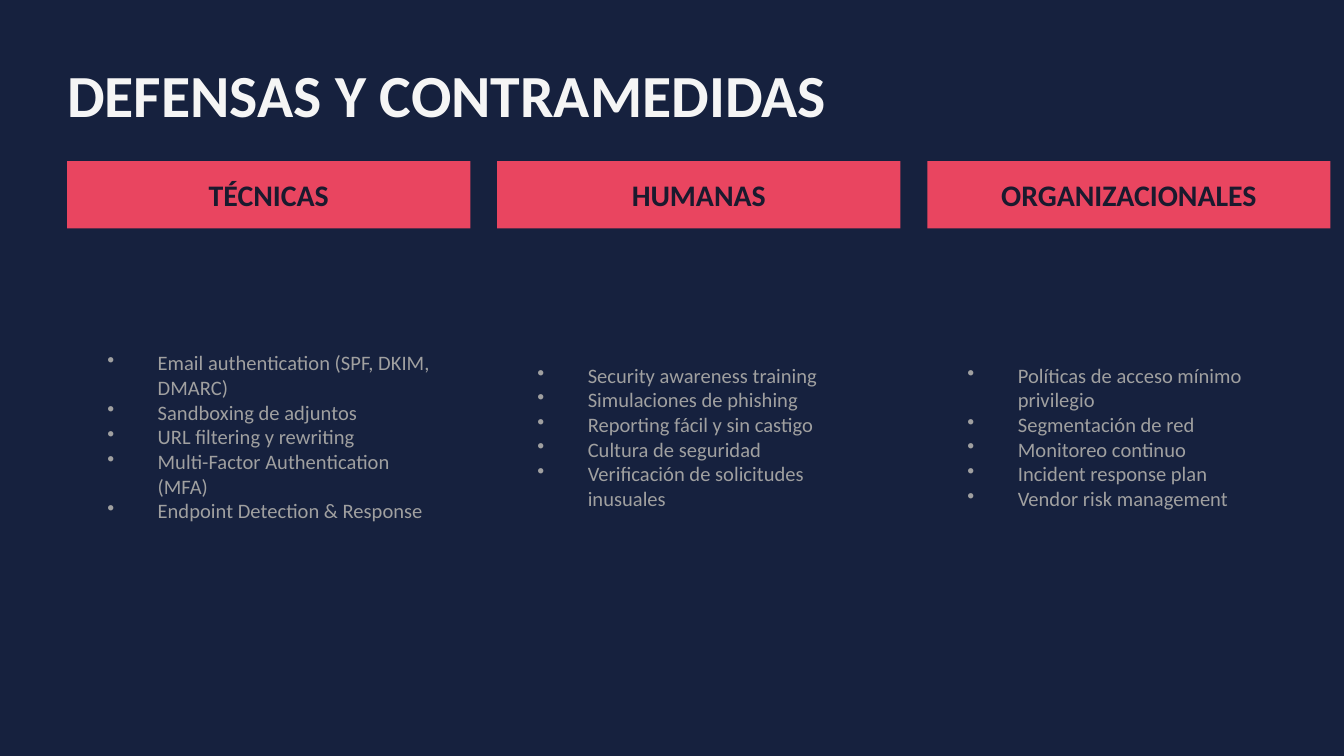
from dataclasses import dataclass

from lxml import etree
from pptx import Presentation
from pptx.dml.color import RGBColor
from pptx.enum import shapes, text
from pptx.oxml import ns
from pptx.util import Pt


@dataclass(frozen=True)
class Theme:
    font: str = "Calibri"
    background: str = "16213E"
    title: str = "F5F5F5"
    banner: str = "E94560"
    heading: str = "1A1A2E"
    body: str = "A0A0A0"
    title_size: int = 32
    heading_size: int = 16
    body_size: int = 11


THEME = Theme()
INDENT = 27

DEFENSES = {
    "TÉCNICAS": [
        "Email authentication (SPF, DKIM, DMARC)",
        "Sandboxing de adjuntos",
        "URL filtering y rewriting",
        "Multi-Factor Authentication (MFA)",
        "Endpoint Detection & Response",
    ],
    "HUMANAS": [
        "Security awareness training",
        "Simulaciones de phishing",
        "Reporting fácil y sin castigo",
        "Cultura de seguridad",
        "Verificación de solicitudes inusuales",
    ],
    "ORGANIZACIONALES": [
        "Políticas de acceso mínimo privilegio",
        "Segmentación de red",
        "Monitoreo continuo",
        "Incident response plan",
        "Vendor risk management",
    ],
}


def add_bullet(paragraph):
    properties = paragraph._p.get_or_add_pPr()
    properties.set("marL", str(Pt(INDENT)))
    properties.set("indent", str(-Pt(INDENT)))
    etree.SubElement(properties, ns.qn("a:buChar")).set("char", "•")


def add_text(slide, box, lines, *, size, color, bold=False,
             align=text.PP_ALIGN.LEFT, bulleted=False, inset=None):
    frame = slide.shapes.add_textbox(*map(Pt, box)).text_frame
    frame.word_wrap = True
    frame.vertical_anchor = text.MSO_ANCHOR.MIDDLE
    if inset is not None:
        frame.margin_left = frame.margin_right = Pt(inset)
        frame.margin_top = frame.margin_bottom = Pt(inset)
    frame.text = "\n".join(lines)
    for paragraph in frame.paragraphs:
        if bulleted:
            add_bullet(paragraph)
        paragraph.alignment = align
        font = paragraph.runs[0].font
        font.name = THEME.font
        font.size = Pt(size)
        font.bold = bold
        font.color.rgb = RGBColor.from_string(color)


def add_title(slide, box, title):
    add_text(slide, box, [title], size=THEME.title_size, color=THEME.title,
             bold=True, inset=0)


def add_defense_column(slide, box, heading, measures):
    left, top, width, height = box
    banner_height, side, list_top = 36, 14.4, 46.8
    inner_left, inner_width = left + side, width - 2 * side

    banner = slide.shapes.add_shape(
        shapes.MSO_SHAPE.RECTANGLE, *map(Pt, (left, top, width, banner_height)))
    banner.shadow.inherit = False
    banner.fill.solid()
    banner.fill.fore_color.rgb = RGBColor.from_string(THEME.banner)
    banner.line.fill.background()

    add_text(slide, (inner_left, top + 7.2, inner_width, banner_height - 14.4),
             [heading], size=THEME.heading_size, color=THEME.heading,
             bold=True, align=text.PP_ALIGN.CENTER)
    add_text(slide, (inner_left, top + list_top, inner_width, height - list_top),
             measures, size=THEME.body_size, color=THEME.body, bulleted=True)


def add_defenses(slide, box):
    left, top, width, height = box
    gap = 14.4
    column_width = (width - gap * (len(DEFENSES) - 1)) / len(DEFENSES)
    for index, (heading, measures) in enumerate(DEFENSES.items()):
        column_left = left + index * (column_width + gap)
        add_defense_column(slide, (column_left, top, column_width, height),
                           heading, measures)


def main():
    deck = Presentation()
    deck.slide_width, deck.slide_height = Pt(720), Pt(405)
    slide = deck.slides.add_slide(deck.slide_layouts[6])
    slide.background.fill.solid()
    slide.background.fill.fore_color.rgb = RGBColor.from_string(THEME.background)
    add_title(slide, (36, 28.8, 648, 43.2), "DEFENSAS Y CONTRAMEDIDAS")
    add_defenses(slide, (36, 86.4, 676.8, 248.4))
    deck.save("out.pptx")


if __name__ == "__main__":
    main()
